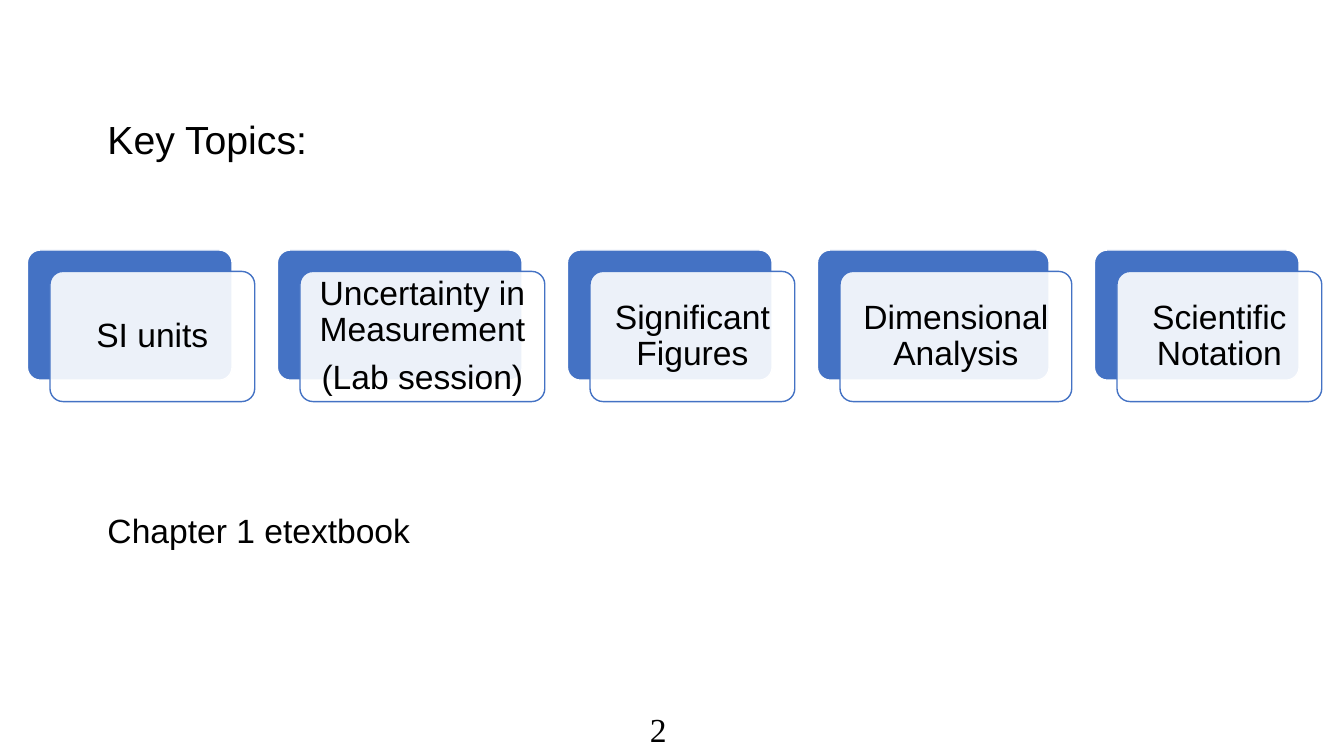
"""Build the key topics slide."""
from dataclasses import dataclass

from lxml import etree
from pptx import Presentation, util as u
from pptx.dml.color import RGBColor
from pptx.enum import shapes, text
from pptx.oxml import ns


@dataclass(frozen=True)
class Theme:
    """Colours, fonts and type sizes."""
    ink: str = "000000"
    blue: str = "4472C4"
    white: str = "FFFFFF"
    sans: str = "Arial"
    serif: str = "Times New Roman"
    head: int = 28
    body: int = 24


class Deck:
    """Draw the elements of one slide in a theme."""

    def __init__(self, theme):
        """Open a blank wide slide."""
        self.theme = theme
        self.file = Presentation()
        self.file.slide_width = u.Cm(33.87)
        self.file.slide_height = u.Cm(19.05)
        self.slide = self.file.slides.add_slide(self.file.slide_layouts[6])

    def apply(self, item, style):
        """Set each style value on an item."""
        for name, value in style.items():
            setattr(item, name, value)

    def words(self, home, box, lines, size, font, frame, para):
        """Add a text box with one paragraph for each line."""
        body = home.add_textbox(*map(u.Cm, box)).text_frame
        self.apply(body, frame)
        body.text = "\n".join(lines)
        for item in body.paragraphs:
            self.apply(item, para)
            self.apply(item.runs[0].font, {"name": font, "size": u.Pt(size)})
            item.runs[0].font.color.rgb = RGBColor.from_string(self.theme.ink)

    def label(self, box, line, size, font, wrap=True):
        """Add a plain line of text."""
        frame = {"word_wrap": wrap, "auto_size": text.MSO_AUTO_SIZE.SHAPE_TO_FIT_TEXT}
        self.words(self.slide.shapes, box, [line], size, font, frame, {})

    def panel(self, home, box, fill, line, alpha=100):
        """Add a rounded panel."""
        form = home.add_shape(shapes.MSO_SHAPE.ROUNDED_RECTANGLE, *map(u.Cm, box))
        form.adjustments[0] = 0.1
        form.shadow.inherit = False
        form.fill.solid()
        form.fill.fore_color.rgb = RGBColor.from_string(fill)
        form.line.color.rgb = RGBColor.from_string(line)
        form.line.width = u.Pt(1)
        if alpha < 100:
            tint = form.element.spPr.find(ns.qn("a:solidFill"))[0]
            etree.SubElement(tint, ns.qn("a:alpha"), val=str(alpha * 1000))

    def card(self, home, left, top, width, height, lines):
        """Add a blue panel with a clear, captioned panel over it."""
        look = self.theme
        x, y, pad = left + 0.57, top + 0.54, 0.1
        self.panel(home, (left, top, width, height), look.blue, look.white)
        self.panel(home, (x, y, width, height), look.white, look.blue, 90)
        frame = {"word_wrap": True, "vertical_anchor": text.MSO_ANCHOR.MIDDLE}
        frame |= {f"margin_{side}": u.Cm(0.25) for side in ("left", "top", "right", "bottom")}
        para = {"alignment": text.PP_ALIGN.CENTER, "line_spacing": 0.9, "space_after": u.Pt(8.4)}
        box = (x + pad, y + pad, width - 2 * pad, height - 2 * pad)
        self.words(home, box, lines, look.body, look.sans, frame, para)

    def row(self, left, top, height, gap, cards):
        """Add a grouped row of cards at equal gaps."""
        home = self.slide.shapes.add_group_shape().shapes
        for width, lines in cards:
            self.card(home, left, top, width, height, lines)
            left += width + gap


TOPICS = [
    (5.16, ["SI units"]),
    (6.17, ["Uncertainty in Measurement", "(Lab session)"]),
    (5.16, ["Significant Figures"]),
    (5.84, ["Dimensional Analysis"]),
    (5.16, ["Scientific Notation"]),
]


def main():
    """Compose and save the slide."""
    look = Theme()
    deck = Deck(look)
    deck.label((16.13, 17.73, 1.75, 1.27), "2", look.body, look.serif)
    deck.label((2.46, 2.77, 8.38, 1.45), "Key Topics:", look.head, look.sans)
    deck.row(0.69, 6.3, 3.28, 1.14, TOPICS)
    deck.label((2.46, 12.73, 8.2, 1.27), "Chapter 1 etextbook", look.body, look.sans, False)
    deck.file.save("out.pptx")


if __name__ == "__main__":
    main()
